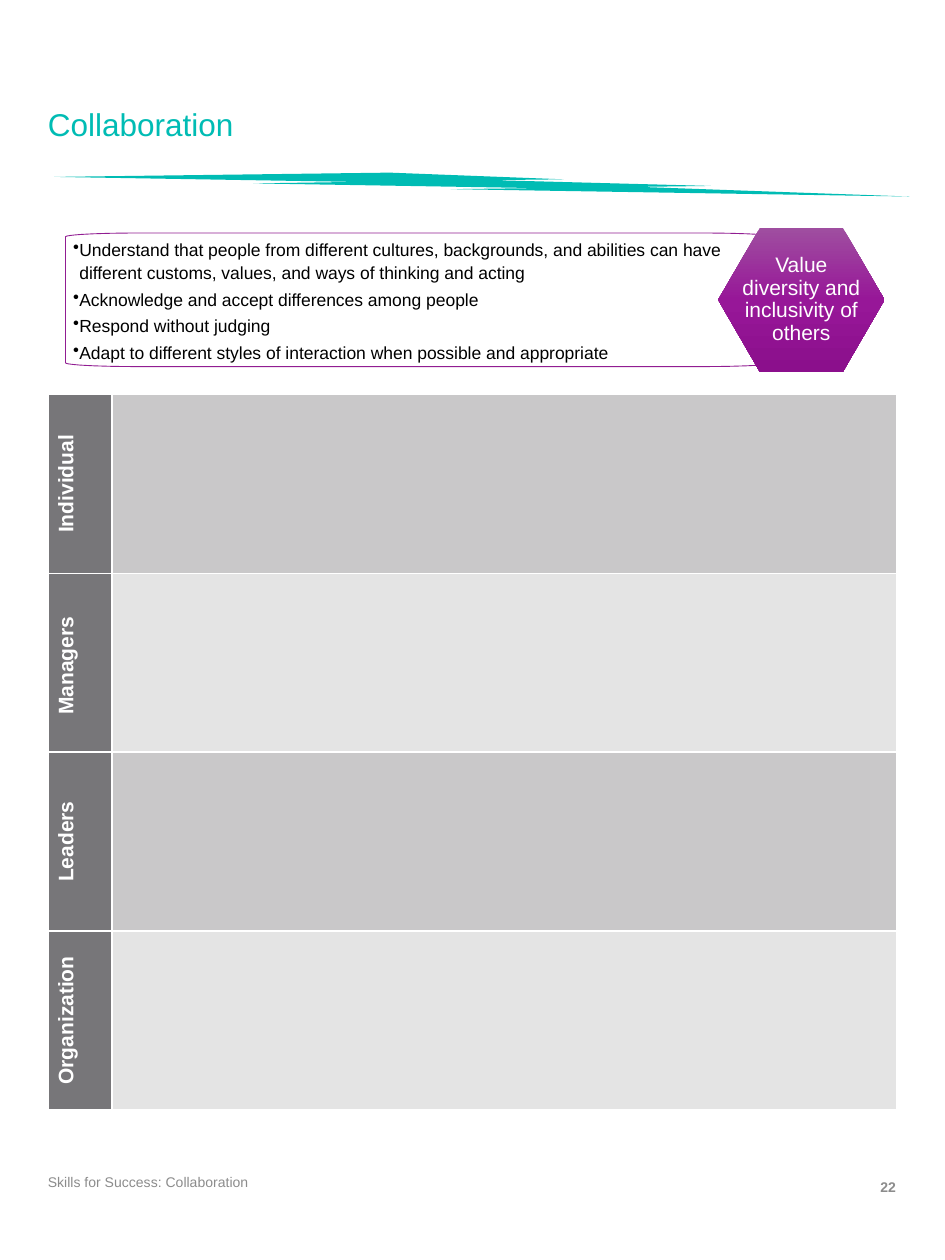
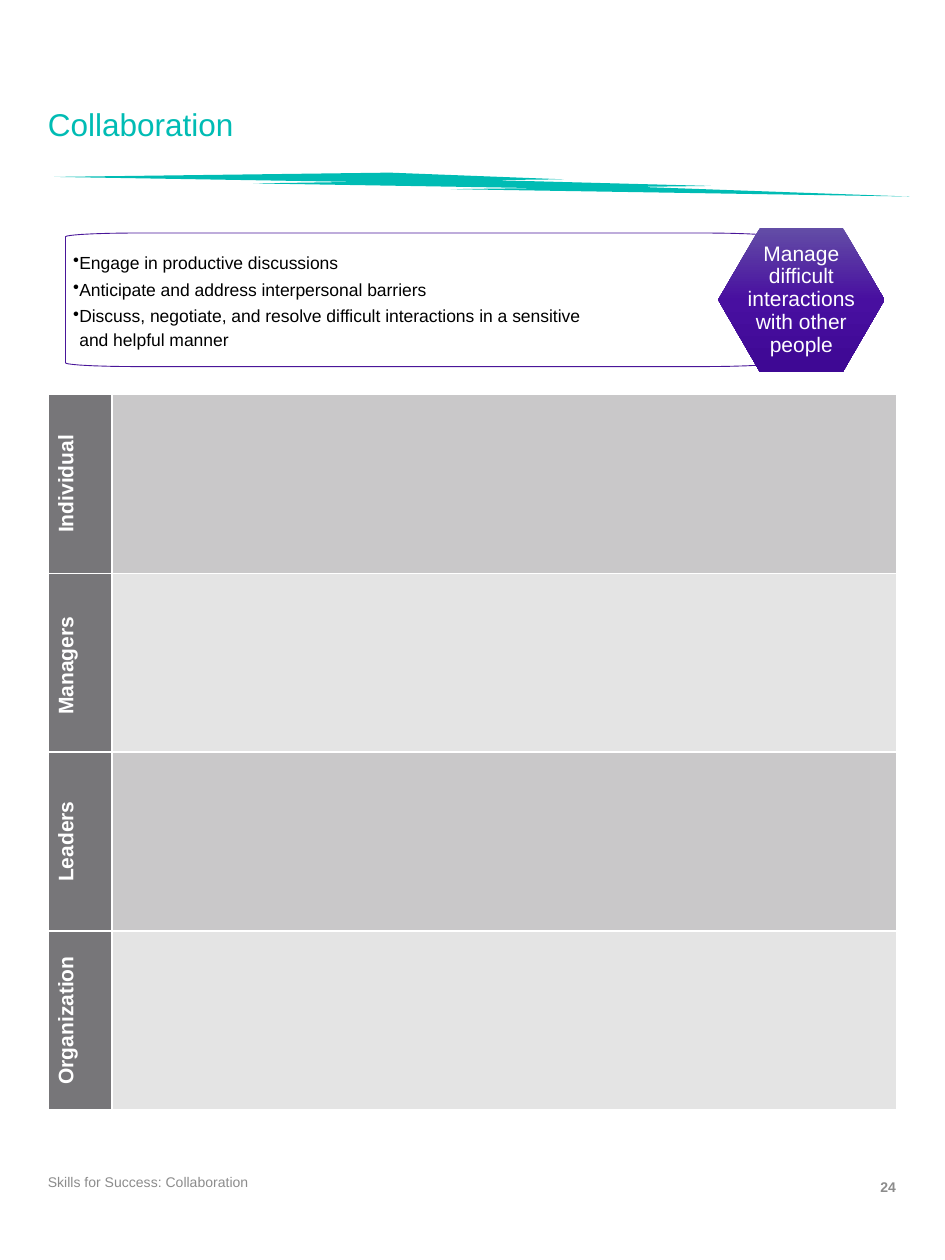
from copy import deepcopy
from dataclasses import dataclass
from math import cos, pi, sin

from lxml.etree import SubElement
from pptx import Presentation
from pptx.dml.color import RGBColor
from pptx.enum.shapes import MSO_SHAPE
from pptx.enum.text import MSO_ANCHOR, PP_ALIGN
from pptx.oxml.ns import qn
from pptx.util import Inches, Pt

COLORS = {
    "teal": "00BCB4", "white": "FFFFFF", "black": "000000", "footer": "8C8C8C",
    "label": "777679", "row_dark": "C9C8C9", "row_light": "E4E4E4",
}
LEFT, WIDTH = 0.38, 6.74
ROLES = ["Individual", "Managers ", "Leaders", "Organization"]
LABEL_WIDTH, ROW_HEIGHT = 0.51, 1.42
TITLE = {"size": Pt(18)}
BODY = {"size": Pt(10)}
SKILL = {"size": Pt(12)}
ROLE = {"size": Pt(12), "bold": True}
FOOTER = {"size": Pt(8)}
PAGE = {"size": Pt(8), "bold": True}


@dataclass
class SkillPage:
    number: int
    skill: str
    behaviours: list[str]
    line: str
    gradient: list[tuple[float, str]]


PAGES = [
    SkillPage(22, "Value diversity and inclusivity of others", [
        "Understand that people from different cultures, backgrounds, and abilities can have "
        "different customs, values, and ways of thinking and acting",
        "Acknowledge and accept differences among people",
        "Respond without judging",
        "Adapt to different styles of interaction when possible and appropriate",
    ], "911D92", [(0, "9F4EA0"), (0.5, "971798"), (1, "8B0F8C")]),
    SkillPage(24, "Manage difficult interactions with other people", [
        "Engage in productive discussions",
        "Anticipate and address interpersonal barriers",
        "Discuss, negotiate, and resolve difficult interactions in a sensitive\n"
        "and helpful manner",
    ], "491699", [(0, "634DA6"), (0.5, "480FA0"), (1, "3E0894")]),
]


def rgb(color: str) -> RGBColor:
    return RGBColor.from_string(COLORS.get(color, color))


def apply(target, values: dict) -> None:
    for name, value in values.items():
        setattr(target, name, value)


def write(p, text: str, font: dict, color: str, **layout) -> None:
    p.text = text
    apply(p, layout)
    for r in p.runs:
        apply(r.font, {"name": "Arial", **font})
        r.font.color.rgb = rgb(color)


def set_frame(tf, side: float, top: float) -> None:
    apply(tf, {
        "word_wrap": True, "vertical_anchor": MSO_ANCHOR.MIDDLE,
        "margin_left": Inches(side), "margin_right": Inches(side),
        "margin_top": Inches(top), "margin_bottom": Inches(top),
    })


def add_text(slide, box: tuple, text: str, font: dict, color: str, inset: float = 0.05, **layout) -> None:
    tf = slide.shapes.add_textbox(*map(Inches, box)).text_frame
    set_frame(tf, 0, inset)
    write(tf.paragraphs[0], text, font, color, **layout)


def add_polygon(slide, points: list[tuple[float, float]]):
    corners = [(Inches(x), Inches(y)) for x, y in points]
    builder = slide.shapes.build_freeform(*corners[0], scale=1.0)
    builder.add_line_segments(corners[1:], close=True)
    s = builder.convert_to_shape()
    s.shadow.inherit = False
    return s


def rounded_outline(left: float, top: float, right: float, bottom: float,
                    rx: float, ry: float, steps: int = 12) -> list[tuple[float, float]]:
    """Clockwise points of a rectangle with elliptical corners."""
    centers = [(left + rx, top + ry), (right - rx, top + ry),
               (right - rx, bottom - ry), (left + rx, bottom - ry)]
    return [
        (cx + rx * cos(angle), cy + ry * sin(angle))
        for corner, (cx, cy) in enumerate(centers)
        for angle in (pi + (corner + i / steps) * pi / 2 for i in range(steps + 1))
    ]


def add_behaviours(slide, page: SkillPage) -> None:
    s = add_polygon(slide, rounded_outline(0.52, 1.85, 6.15, 2.91, 0.57, 0.03))
    s.fill.solid()
    s.fill.fore_color.rgb = rgb("white")
    fill = s._element.spPr.find(qn("a:solidFill"))
    SubElement(fill[0], qn("a:alpha"), val="90000")
    s.line.color.rgb = rgb(page.line)
    s.line.width = Pt(0.5)
    tf = s.text_frame
    set_frame(tf, 0.06, 0.06)
    for i, text in enumerate(page.behaviours):
        p = tf.add_paragraph() if i else tf.paragraphs[0]
        pPr = p._p.get_or_add_pPr()
        pPr.set("marL", str(Inches(0.05)))
        pPr.set("indent", str(-Inches(0.05)))
        SubElement(pPr, qn("a:buChar"), char="•")
        write(p, text, BODY, "black", level=1, alignment=PP_ALIGN.LEFT, line_spacing=1.1,
              space_before=Pt(1 if i else 0), space_after=Pt(1))


def add_skill(slide, page: SkillPage) -> None:
    left, top, right, bottom, slant = 5.7, 1.81, 7.02, 2.95, 0.33
    middle = (top + bottom) / 2
    s = add_polygon(slide, [(left, middle), (left + slant, top), (right - slant, top),
                            (right, middle), (right - slant, bottom), (left + slant, bottom)])
    s.line.fill.background()
    s.fill.gradient()
    s.fill.gradient_angle = 270
    stops = s._element.spPr.find(qn("a:gradFill")).find(qn("a:gsLst"))
    stops.append(deepcopy(stops[0]))
    for stop, (position, color) in zip(s.fill.gradient_stops, page.gradient):
        stop.position = position
        stop.color.rgb = rgb(color)
    tf = s.text_frame
    set_frame(tf, 0.17, 0.15)
    write(tf.paragraphs[0], page.skill, SKILL, "white",
          alignment=PP_ALIGN.CENTER, line_spacing=0.9)


def style_cell(cell, color: str) -> None:
    """Give a cell white borders and a solid fill."""
    tcPr = cell._tc.get_or_add_tcPr()
    for side in ("lnL", "lnR", "lnT", "lnB"):
        ln = SubElement(tcPr, qn(f"a:{side}"), w=str(Pt(1)))
        fill = SubElement(ln, qn("a:solidFill"))
        SubElement(fill, qn("a:srgbClr"), val=COLORS["white"])
    cell.fill.solid()
    cell.fill.fore_color.rgb = rgb(color)


def add_role_table(slide) -> None:
    height = ROW_HEIGHT * len(ROLES)
    table = slide.shapes.add_table(
        len(ROLES), 2, *map(Inches, (LEFT, 3.13, WIDTH, height))).table
    apply(table, {"first_row": False, "horz_banding": False})
    for column, width in zip(table.columns, (LABEL_WIDTH, WIDTH - LABEL_WIDTH)):
        column.width = Inches(width)
    for i, role in enumerate(ROLES):
        table.rows[i].height = Inches(ROW_HEIGHT)
        label, notes = table.rows[i].cells
        style_cell(label, "label")
        style_cell(notes, "row_light" if i % 2 else "row_dark")
        label.vertical_anchor = MSO_ANCHOR.MIDDLE
        label._tc.tcPr.set("vert", "vert270")
        write(label.text_frame.paragraphs[0], role, ROLE, "white", alignment=PP_ALIGN.CENTER)


def add_frame(slide, number: int) -> None:
    """Add the title, the band below it and the footer."""
    band = slide.shapes.add_shape(MSO_SHAPE.LIGHTNING_BOLT, *map(Inches, (0.43, 1.37, 6.79, 0.19)))
    band.shadow.inherit = False
    band.fill.solid()
    band.fill.fore_color.rgb = rgb("teal")
    band.line.fill.background()
    add_text(slide, (LEFT, 0.53, WIDTH, 0.94), "Collaboration", TITLE, "teal",
             inset=0, line_spacing=0.9)
    add_text(slide, (LEFT, 9.2, 2.53, 0.36), "Skills for Success: Collaboration", FOOTER, "footer")
    add_text(slide, (6.33, 9.27, 0.78, 0.3), str(number), PAGE, "footer", alignment=PP_ALIGN.RIGHT)


def main() -> None:
    prs = Presentation()
    prs.slide_width, prs.slide_height = Inches(7.5), Inches(10)
    for page in PAGES:
        slide = prs.slides.add_slide(prs.slide_layouts[6])
        add_frame(slide, page.number)
        add_role_table(slide)
        add_behaviours(slide, page)
        add_skill(slide, page)
    prs.save("out.pptx")


if __name__ == "__main__":
    main()
